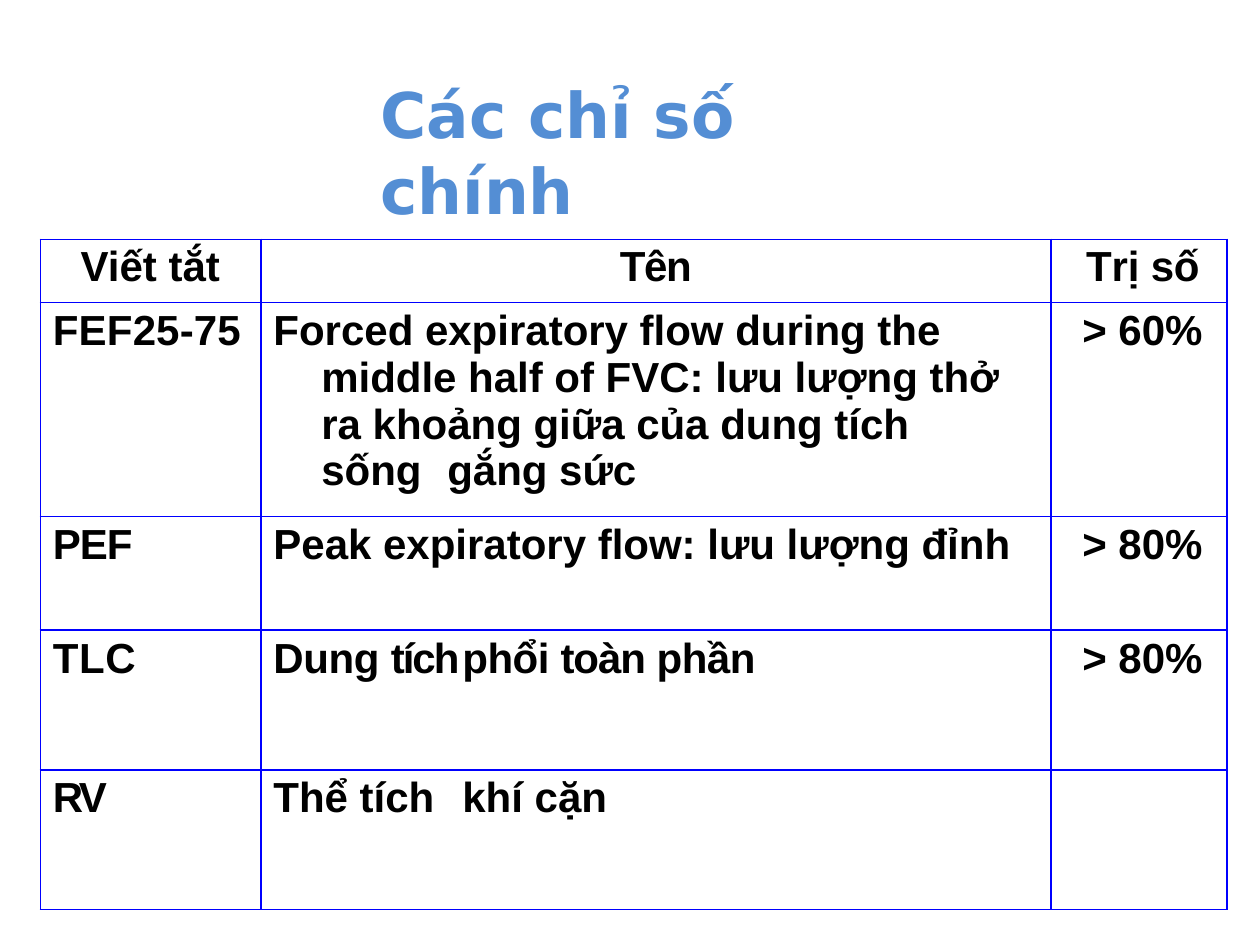
"""Build a slide with a table of the main lung function indices."""
from dataclasses import dataclass

from lxml.etree import SubElement
from pptx import Presentation
from pptx.dml.color import RGBColor as RGB
from pptx.enum.text import PP_ALIGN as Align
from pptx.oxml.ns import qn
from pptx.util import Emu, Inches, Pt

COLORS = {"title": "548ED4", "text": "000000", "border": "0000FF"}
WIDTH, HEIGHT = Inches(10), Inches(7.5)
GRID_COLS, GRID_ROWS = 1000, 750
COL_SPANS = (175, 627, 140)
ROW_SPANS = (50, 170, 90, 111, 111)
ROW_SPACING = (2.5, 2.5, 2.8, 2.8, 3)


@dataclass(frozen=True)
class Entry:
    runs: tuple[tuple[str, float], ...] = ()
    left: int = 10
    hang: int = 0
    tabs: tuple[int, ...] = ()
    align: Align = Align.LEFT


def x(n: float) -> Emu:
    return Emu(int(WIDTH * n / GRID_COLS))


def y(n: float) -> Emu:
    return Emu(int(HEIGHT * n / GRID_ROWS))


def value(text: str) -> Entry:
    return Entry(((text, 0),), left=25)


ROWS = (
    (Entry((("Viết tắt", 0),), left=32),
     Entry((("Tên", -0.8),), left=0, align=Align.CENTER),
     Entry((("T", -1.7), ("rị số", -0.1)), left=28)),
    (Entry((("FEF25-75", 0.1),)),
     Entry((("Forced expiratory flow during the middle half of FVC: "
             "lưu lượng thở ra khoảng giữa của dung tích\tsống\tgắng sức", 0),),
           left=48, hang=38, tabs=(97, 520)),
     value("> 60%")),
    (Entry((("PEF", -0.6),)),
     Entry((("Peak expiratory flow: lưu lượng đỉnh", 0),)),
     value("> 80%")),
    (Entry((("TLC", 0.3),)),
     Entry((("Dung ", -0.2), ("tích\t", -1.2), ("phổi ", -0.3),
            ("toàn ", -0.6), ("phần", -0.3)), tabs=(173,)),
     value("> 80%")),
    (Entry((("RV", -2.1),)),
     Entry((("Thể tích\tkhí cặn", 0),), tabs=(149,)),
     Entry()),
)


def add_text(p, text: str, *, size: float = 24, font: str = "Arial",
             color: str = "text", spacing: float = 0) -> None:
    r = p.add_run()
    r.text = text
    f = r.font
    f.size, f.name, f.bold = Pt(size), font, True
    f.color.rgb = RGB.from_string(COLORS[color])
    if spacing:
        r._r.get_or_add_rPr().set("spc", str(round(spacing * 100)))


def set_borders(cell) -> None:
    tcPr = cell._tc.get_or_add_tcPr()
    for i, side in enumerate(("lnL", "lnR", "lnT", "lnB")):
        ln = SubElement(tcPr, qn(f"a:{side}"), w=str(Pt(1)))
        fill = SubElement(ln, qn("a:solidFill"))
        SubElement(fill, qn("a:srgbClr"), val=COLORS["border"])
        tcPr.insert(i, ln)


def fill_cell(cell, entry: Entry, before: float, top: int) -> None:
    cell.fill.background()
    set_borders(cell)
    cell.margin_left = cell.margin_bottom = 0
    cell.margin_right = x(5) if entry.hang else 0
    cell.margin_top = y(top)
    p = cell.text_frame.paragraphs[0]
    if not entry.runs:
        return
    p.alignment, p.space_before = entry.align, Pt(before)
    pPr = p._p.get_or_add_pPr()
    pPr.set("marL", str(x(entry.left)))
    pPr.set("indent", str(-x(entry.hang)))
    if entry.tabs:
        tabs = SubElement(pPr, qn("a:tabLst"))
        for pos in entry.tabs:
            SubElement(tabs, qn("a:tab"), pos=str(x(pos)), algn="l")
    for text, spacing in entry.runs:
        add_text(p, text, spacing=spacing)


def add_title(s, text: str) -> None:
    tf = s.shapes.add_textbox(x(302), y(60), x(450), y(63)).text_frame
    tf.word_wrap = True
    tf.margin_left = tf.margin_right = tf.margin_top = tf.margin_bottom = 0
    add_text(tf.paragraphs[0], text, size=36, font="DejaVu Sans", color="title")


def add_index_table(s) -> None:
    table = s.shapes.add_table(len(ROWS), len(COL_SPANS), x(32), y(190),
                               x(sum(COL_SPANS)), y(sum(ROW_SPANS))).table
    table.first_row = table.horz_banding = False
    for col, span in zip(table.columns, COL_SPANS):
        col.width = x(span)
    for i, (row, span) in enumerate(zip(table.rows, ROW_SPANS)):
        row.height = y(span)
        for cell, entry in zip(row.cells, ROWS[i]):
            fill_cell(cell, entry, ROW_SPACING[i], 4 if i else 3)


def main() -> None:
    prs = Presentation()
    prs.slide_width, prs.slide_height = WIDTH, HEIGHT
    s = prs.slides.add_slide(prs.slide_layouts[6])
    add_title(s, "Các chỉ số chính")
    add_index_table(s)
    prs.save("out.pptx")


if __name__ == "__main__":
    main()
